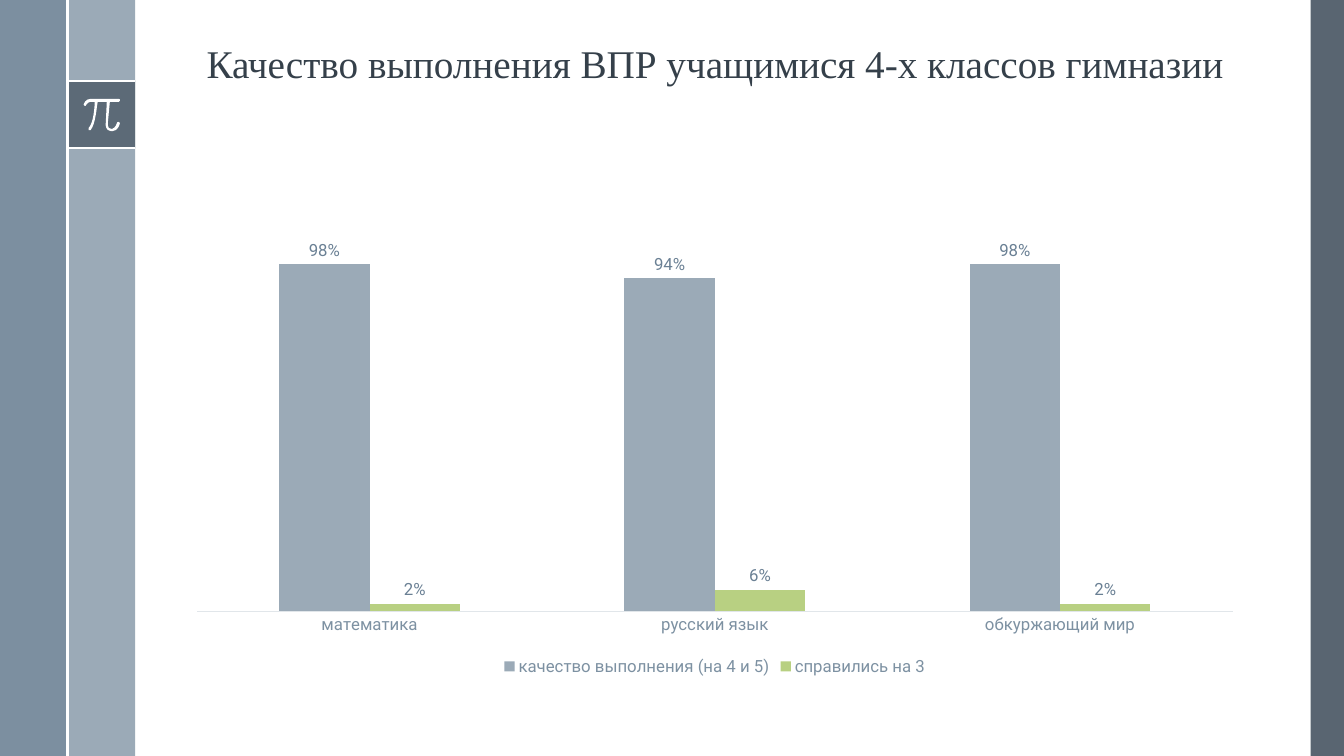
from pptx import Presentation
from pptx.chart.data import CategoryChartData
from pptx.dml.color import RGBColor
from pptx.enum.chart import XL_CHART_TYPE, XL_LABEL_POSITION, XL_LEGEND_POSITION, XL_TICK_LABEL_POSITION, XL_TICK_MARK
from pptx.enum.shapes import MSO_CONNECTOR, MSO_SHAPE
from pptx.enum.text import MSO_ANCHOR, PP_ALIGN
from pptx.oxml.ns import qn
from pptx.util import Inches, Pt
from lxml.etree import SubElement

WHITE = RGBColor(0xFF, 0xFF, 0xFF)
SLATE = RGBColor(0x47, 0x55, 0x62)
STEEL = RGBColor(0x6A, 0x80, 0x93)
MIST = RGBColor(0x9B, 0xAA, 0xB7)
GREEN = RGBColor(0xB8, 0xD0, 0x82)
TITLE_INK = RGBColor(0x35, 0x40, 0x4A)
CHART_INK = RGBColor(0x46, 0x55, 0x62)
AXIS_INK = RGBColor(0x7D, 0x91, 0xA2)
LABEL_INK = RGBColor(0x6A, 0x80, 0x94)
AXIS_LINE = RGBColor(0xE1, 0xE6, 0xEA)

BAND = 0.67  # width of each side band
BADGE_TOP = 0.8
CONTENT_LEFT, CONTENT_WIDTH = 1.74, 10.7

SUBJECTS = ["математика", "русский язык", "обкуржающий мир"]
RESULTS = [
    ("качество выполнения (на 4 и 5)", (0.98, 0.94, 0.98), MIST),
    ("справились на 3", (0.02, 0.06, 0.02), GREEN),
]

# Outline of the pi sign: each row is a Bezier curve, two controls and an end
PI_START = (1.18, 0.98)
PI_CURVES = [
    ((0.9, 0.98), (0.9, 0.98), (0.9, 0.98)),
    ((0.85, 0.98), (0.83, 1.03), (0.83, 1.04)),
    ((0.83, 1.04), (0.83, 1.05), (0.84, 1.05)),
    ((0.84, 1.05), (0.84, 1.05), (0.84, 1.05)),
    ((0.85, 1.05), (0.85, 1.05), (0.85, 1.05)),
    ((0.85, 1.05), (0.87, 1.01), (0.9, 1.01)),
    ((0.94, 1.01), (0.94, 1.01), (0.94, 1.01)),
    ((0.94, 1.05), (0.93, 1.22), (0.88, 1.27)),
    ((0.87, 1.28), (0.87, 1.28), (0.88, 1.29)),
    ((0.88, 1.29), (0.89, 1.29), (0.89, 1.29)),
    ((0.89, 1.29), (0.9, 1.29), (0.9, 1.29)),
    ((0.95, 1.23), (0.96, 1.05), (0.97, 1.01)),
    ((1.06, 1.01), (1.06, 1.01), (1.06, 1.01)),
    ((1.05, 1.22), (1.05, 1.22), (1.05, 1.22)),
    ((1.05, 1.22), (1.04, 1.26), (1.07, 1.29)),
    ((1.08, 1.3), (1.09, 1.3), (1.1, 1.3)),
    ((1.11, 1.3), (1.11, 1.3), (1.12, 1.3)),
    ((1.17, 1.3), (1.19, 1.23), (1.19, 1.22)),
    ((1.19, 1.22), (1.18, 1.21), (1.18, 1.21)),
    ((1.17, 1.21), (1.16, 1.21), (1.16, 1.22)),
    ((1.16, 1.22), (1.15, 1.27), (1.11, 1.28)),
    ((1.1, 1.28), (1.09, 1.28), (1.08, 1.27)),
    ((1.07, 1.26), (1.07, 1.23), (1.07, 1.22)),
    ((1.09, 1.01), (1.09, 1.01), (1.09, 1.01)),
    ((1.18, 1.01), (1.18, 1.01), (1.18, 1.01)),
    ((1.19, 1.01), (1.19, 1.0), (1.19, 1.0)),
    ((1.19, 0.99), (1.19, 0.98), (1.18, 0.98)),
]


def paint(shape, color, opacity=100):
    shape.shadow.inherit = False
    shape.line.fill.background()
    shape.fill.solid()
    shape.fill.fore_color.rgb = color
    if opacity < 100:
        srgb = shape.fill._xPr.find(qn("a:solidFill")).find(qn("a:srgbClr"))
        SubElement(srgb, qn("a:alpha")).set("val", str(opacity * 1000))


def add_block(slide, left, top, width, height, color, opacity=100):
    block = slide.shapes.add_shape(
        MSO_SHAPE.RECTANGLE, Inches(left), Inches(top), Inches(width), Inches(height))
    paint(block, color, opacity)


def add_rule(slide, x1, y1, x2, y2):
    rule = slide.shapes.add_connector(
        MSO_CONNECTOR.STRAIGHT, Inches(x1), Inches(y1), Inches(x2), Inches(y2))
    rule.line.color.rgb = WHITE
    rule.line.width = Pt(1.5)
    SubElement(rule._element.spPr, qn("a:effectLst"))


def bend_segments(outline):
    """Turn every three straight segments into one Bezier curve."""
    segments = list(outline.iter(qn("a:lnTo")))
    for first in range(0, len(segments), 3):
        trio = segments[first:first + 3]
        track = trio[0].getparent()
        curve = SubElement(track, qn("a:cubicBezTo"))
        track.replace(trio[0], curve)
        for segment in trio:
            curve.append(segment[0])
        for segment in trio[1:]:
            track.remove(segment)


def add_pi_sign(slide):
    builder = slide.shapes.build_freeform(*map(Inches, PI_START))
    builder.add_line_segments(
        [(Inches(x), Inches(y)) for curve in PI_CURVES for x, y in curve], close=True)
    pi_sign = builder.convert_to_shape()
    bend_segments(pi_sign._element)
    paint(pi_sign, WHITE)


def style_font(font, size, color, name="Roboto"):
    font.name = name
    font.size = Pt(size)
    font.color.rgb = color


def add_title(slide, wording):
    title = slide.shapes.add_textbox(
        Inches(CONTENT_LEFT), Inches(0.19), Inches(CONTENT_WIDTH), Inches(0.72))
    frame = title.text_frame
    frame.word_wrap = True
    frame.vertical_anchor = MSO_ANCHOR.BOTTOM
    paragraph = frame.paragraphs[0]
    paragraph.alignment = PP_ALIGN.CENTER
    paragraph.line_spacing = 0.9
    run = paragraph.add_run()
    run.text = wording
    style_font(run.font, 28, TITLE_INK, "Times New Roman")


def add_results_chart(slide):
    results = CategoryChartData(number_format="0%")
    results.categories = SUBJECTS
    for name, shares, _ in RESULTS:
        results.add_series(name, shares)
    chart = slide.shapes.add_chart(
        XL_CHART_TYPE.COLUMN_CLUSTERED, Inches(CONTENT_LEFT), Inches(1.75),
        Inches(CONTENT_WIDTH), Inches(5), results).chart
    chart.has_title = False
    style_font(chart.font, 10, CHART_INK)

    # Legend
    chart.has_legend = True
    chart.legend.position = XL_LEGEND_POSITION.BOTTOM
    chart.legend.include_in_layout = False
    style_font(chart.legend.font, 12, AXIS_INK)

    # Axes
    subjects = chart.category_axis
    subjects.major_tick_mark = XL_TICK_MARK.NONE
    subjects.tick_label_position = XL_TICK_LABEL_POSITION.NEXT_TO_AXIS
    subjects.format.line.color.rgb = AXIS_LINE
    subjects.format.line.width = Pt(0.75)
    style_font(subjects.tick_labels.font, 12, AXIS_INK)
    shares_axis = chart.value_axis
    shares_axis.has_major_gridlines = False
    shares_axis.minimum_scale = 0
    shares_axis.maximum_scale = 1.2
    shares_axis.visible = False

    # Columns and their labels
    plot = chart.plots[0]
    plot.vary_by_categories = False
    plot.gap_width = 182
    plot.overlap = 0
    for series, (_, _, color) in zip(plot.series, RESULTS):
        series.format.fill.solid()
        series.format.fill.fore_color.rgb = color
        labels = series.data_labels
        labels.show_value = True
        labels.number_format = "0%"
        labels.number_format_is_linked = False
        labels.position = XL_LABEL_POSITION.OUTSIDE_END
        style_font(labels.font, 12, LABEL_INK)


def main():
    deck = Presentation()
    deck.slide_width, deck.slide_height = Inches(13.33), Inches(7.5)
    slide = deck.slides.add_slide(deck.slide_layouts[6])

    # Side bands and badge
    add_block(slide, 13, 0, 0.33, 7.5, SLATE, 90)
    add_block(slide, BAND, 0, BAND, 7.5, MIST)
    add_block(slide, 0, 0, BAND, 7.5, STEEL, 88)
    add_block(slide, BAND, BADGE_TOP, BAND, BAND, SLATE, 75)
    for y in (BADGE_TOP, BADGE_TOP + BAND):
        add_rule(slide, BAND, y, 2 * BAND, y)
    add_pi_sign(slide)
    add_rule(slide, BAND, 0, BAND, 7.5)

    # Content
    add_title(slide, "Качество выполнения ВПР учащимися 4-х классов гимназии")
    add_results_chart(slide)
    deck.save("out.pptx")


if __name__ == "__main__":
    main()
